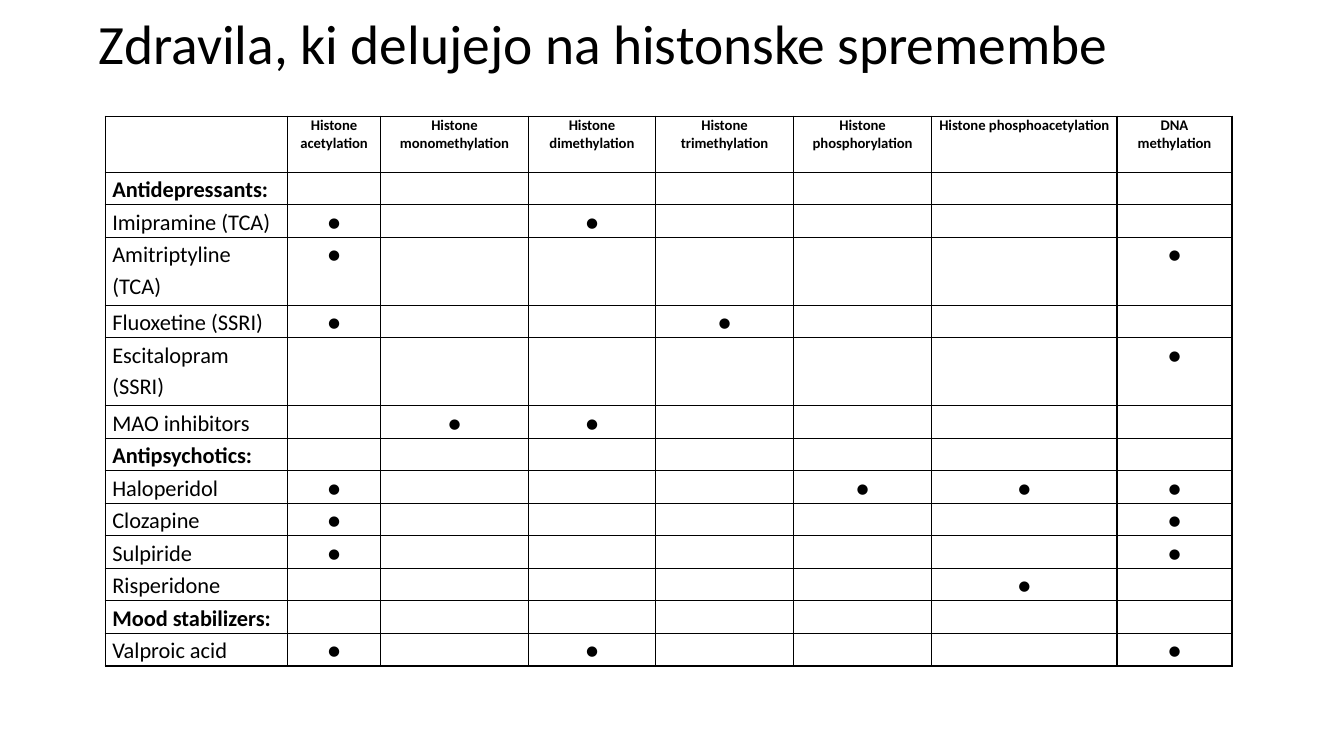
from lxml import etree
from pptx import Presentation
from pptx.dml.color import RGBColor
from pptx.enum.text import MSO_ANCHOR, PP_ALIGN
from pptx.oxml.ns import qn
from pptx.util import Cm, Pt

LEFT, CENTER = PP_ALIGN.LEFT, PP_ALIGN.CENTER
MIDDLE = MSO_ANCHOR.MIDDLE

TITLE = "Zdravila, ki delujejo na histonske spremembe"
MODIFICATIONS = [
    "Histone acetylation", "Histone monomethylation", "Histone dimethylation",
    "Histone trimethylation", "Histone phosphorylation",
    "Histone phosphoacetylation", "DNA methylation",
]
DRUGS = [
    ("Antidepressants:", ()),
    ("Imipramine (TCA)", (1, 3)),
    ("Amitriptyline (TCA)", (1, 7)),
    ("Fluoxetine (SSRI)", (1, 4)),
    ("Escitalopram (SSRI)", (7,)),
    ("MAO inhibitors", (2, 3)),
    ("Antipsychotics:", ()),
    ("Haloperidol", (1, 5, 6, 7)),
    ("Clozapine", (1, 7)),
    ("Sulpiride", (1, 7)),
    ("Risperidone", (6,)),
    ("Mood stabilizers:", ()),
    ("Valproic acid", (1, 3, 7)),
]
MARK = "●"
BLACK = "000000"
COLUMN_WIDTHS = [4.6, 2.34, 3.73, 3.2, 3.48, 3.48, 4.67, 2.9]
HEADER_HEIGHT, LINE_HEIGHT, DOUBLE_HEIGHT = 1.41, 0.82, 1.71
TWO_LINE_DRUGS = ("Amitriptyline (TCA)", "Escitalopram (SSRI)")
CELL_MARGINS = {"margin_left": Cm(0.18), "margin_right": Cm(0.18),
                "margin_top": 0, "margin_bottom": 0}
TITLE_FORMAT = {"line_spacing": 0.9, "alignment": LEFT}
HEADER_FORMAT = {"space_after": Pt(3), "alignment": CENTER}
DRUG_FORMAT = {"line_spacing": 1.15, "alignment": LEFT}
MARK_FORMAT = {"line_spacing": 1.15, "alignment": CENTER}


def set_attributes(target, values):
    for name, value in values.items():
        setattr(target, name, value)


def color(hex_value):
    return RGBColor.from_string(hex_value)


def write(text_frame, text, size, paragraph_format, bold=False):
    paragraph = text_frame.paragraphs[0]
    set_attributes(paragraph, paragraph_format)
    run = paragraph.add_run()
    run.text = text
    set_attributes(run.font, {"name": "Calibri", "size": Pt(size), "bold": bold})
    run.font.color.rgb = color(BLACK)


def draw_borders(cell):
    properties = cell._tc.get_or_add_tcPr()
    for position, side in enumerate(("a:lnL", "a:lnR", "a:lnT", "a:lnB")):
        line = etree.Element(qn(side), w=str(Pt(1)))
        fill = etree.SubElement(line, qn("a:solidFill"))
        etree.SubElement(fill, qn("a:srgbClr"), val=BLACK)
        properties.insert(position, line)


def add_title(slide):
    shape = slide.shapes.add_textbox(Cm(2.24), Cm(0.33), Cm(29.2), Cm(1.7))
    set_attributes(shape.text_frame, {"word_wrap": True, "vertical_anchor": MIDDLE})
    write(shape.text_frame, TITLE, 39.6, TITLE_FORMAT)


def add_drug_table(slide):
    row_heights = [HEADER_HEIGHT] + [
        DOUBLE_HEIGHT if drug in TWO_LINE_DRUGS else LINE_HEIGHT for drug, _ in DRUGS]
    table = slide.shapes.add_table(
        len(row_heights), len(COLUMN_WIDTHS), Cm(2.65), Cm(2.93),
        Cm(sum(COLUMN_WIDTHS)), Cm(sum(row_heights))).table
    set_attributes(table, {"first_row": False, "horz_banding": False})
    for column, width in zip(table.columns, COLUMN_WIDTHS):
        column.width = Cm(width)
    for row, height in zip(table.rows, row_heights):
        row.height = Cm(height)
    for cell in table.iter_cells():
        set_attributes(cell, CELL_MARGINS)
        cell.fill.background()
        draw_borders(cell)
    for column, modification in enumerate(MODIFICATIONS, 1):
        write(table.cell(0, column).text_frame, modification, 10.5, HEADER_FORMAT, True)
    for row, (drug, marked_columns) in enumerate(DRUGS, 1):
        write(table.cell(row, 0).text_frame, drug, 16, DRUG_FORMAT, drug.endswith(":"))
        for column in marked_columns:
            write(table.cell(row, column).text_frame, MARK, 16, MARK_FORMAT)


def main():
    presentation = Presentation()
    set_attributes(presentation, {"slide_width": Cm(33.87), "slide_height": Cm(19.05)})
    slide = presentation.slides.add_slide(presentation.slide_layouts[6])
    add_title(slide)
    add_drug_table(slide)
    presentation.save("out.pptx")


if __name__ == "__main__":
    main()
